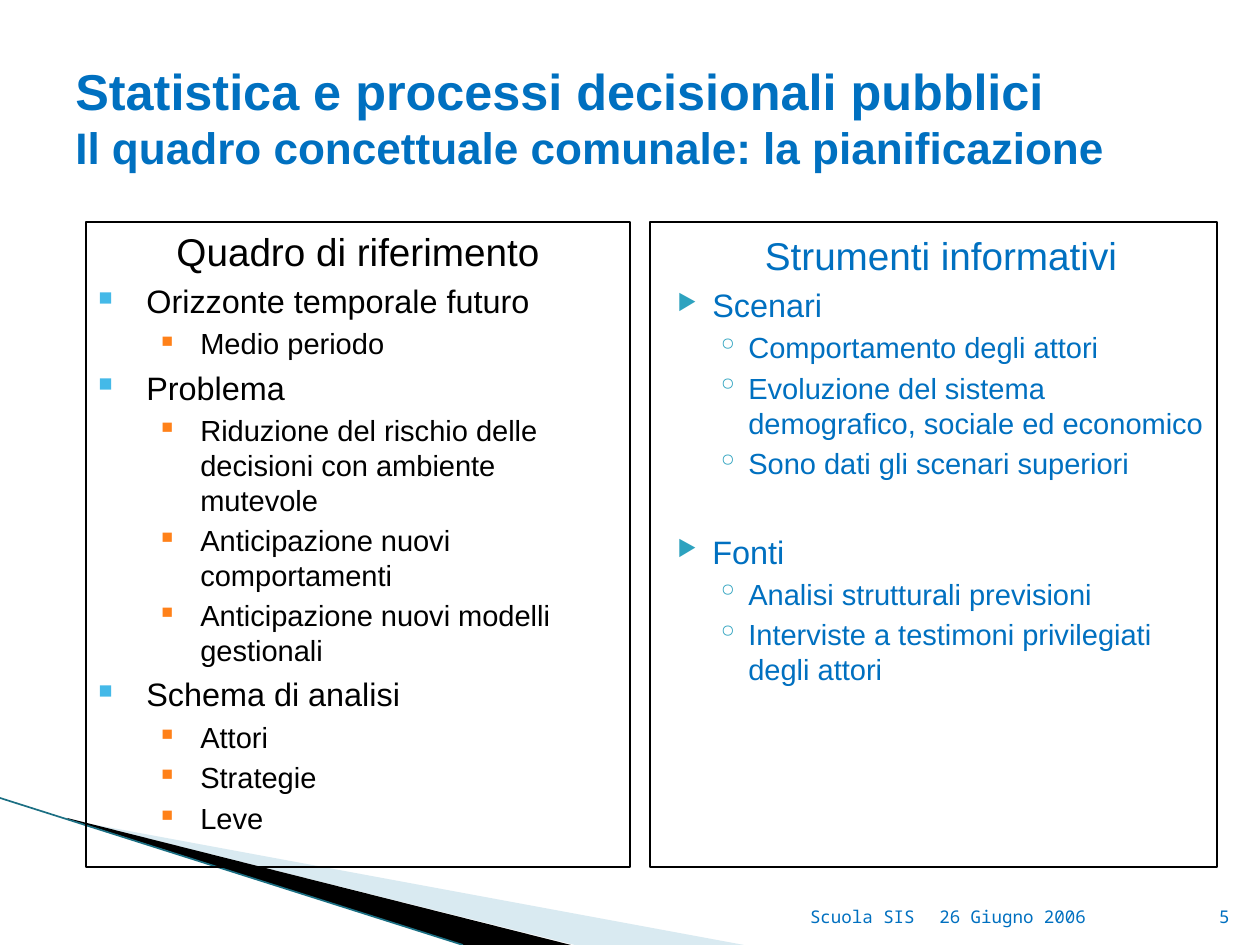
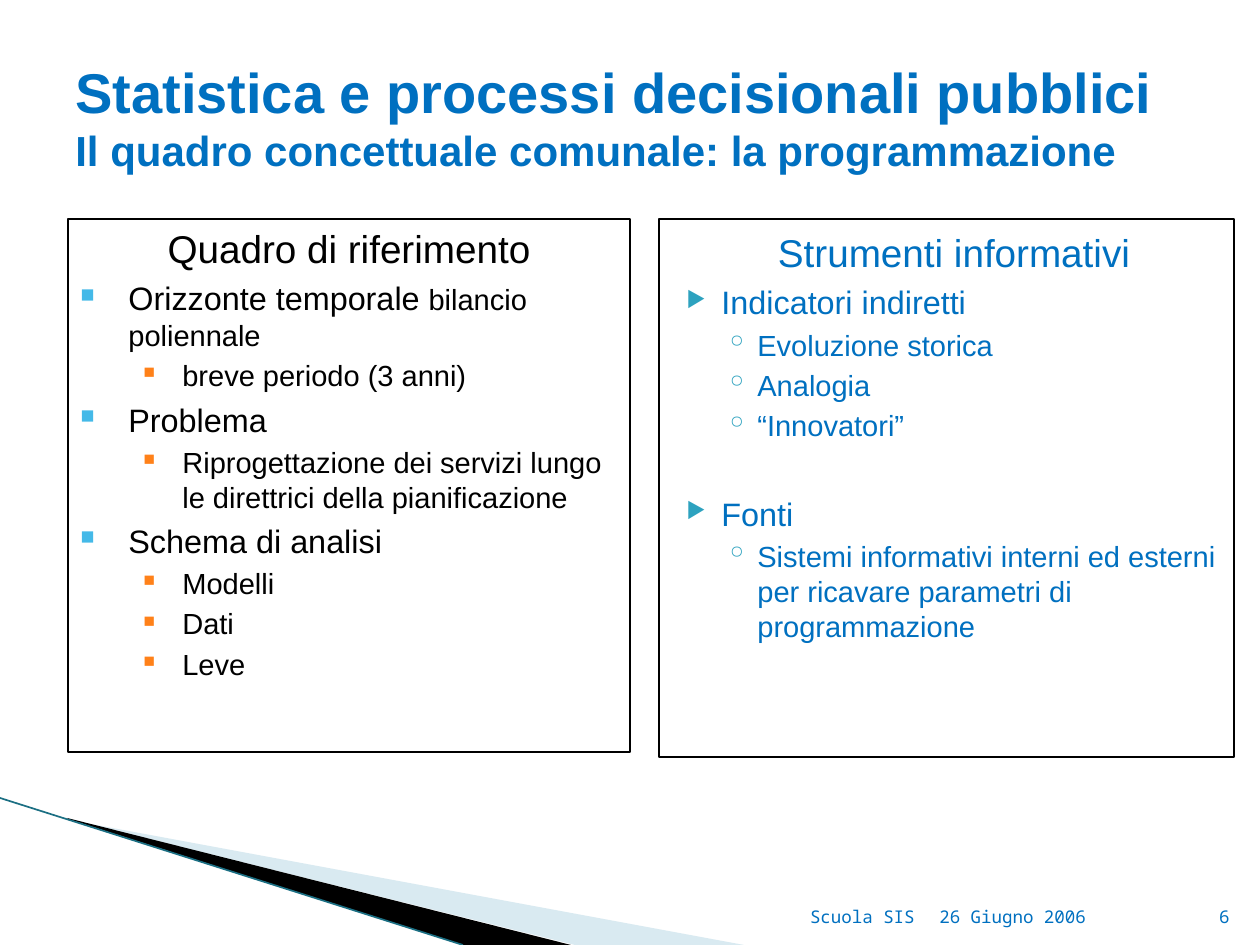
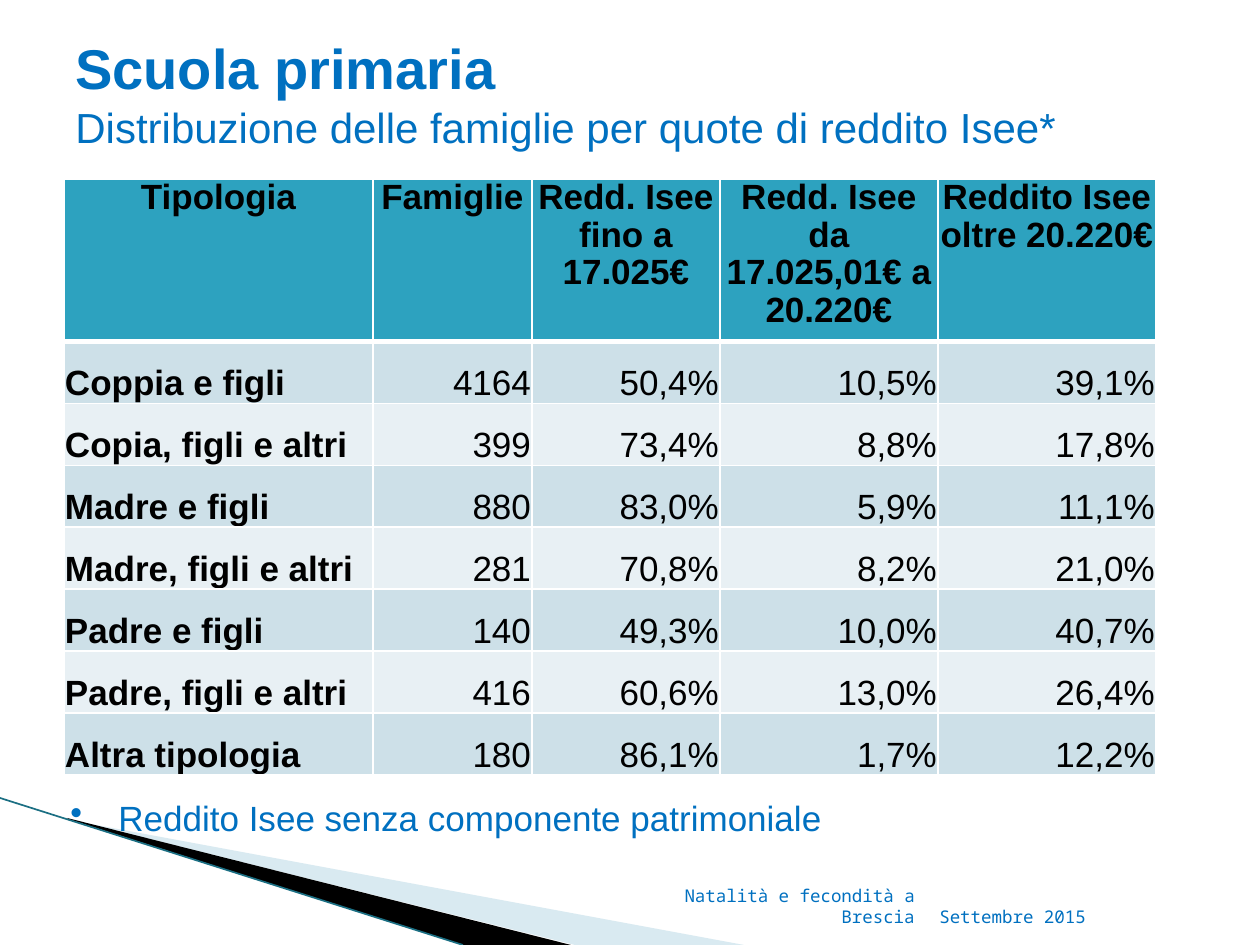
from lxml.etree import SubElement
from pptx import Presentation
from pptx.dml.color import RGBColor
from pptx.enum.shapes import MSO_CONNECTOR, MSO_SHAPE
from pptx.enum.text import MSO_ANCHOR, PP_ALIGN
from pptx.oxml.ns import qn
from pptx.util import Pt

SCALE = 914400 / 126
WIDE, HIGH = 1260, 945
SANS, MONO = "Arial", "Noto Sans Mono"
BLUE, BLACK, WHITE, TEAL = "0070C0", "000000", "FFFFFF", "2DA2BF"
PALE, EDGE = "A0CBDC", "1B6F83"
BANDS = ("CDE0E8", "E8F0F4")

PALE_WEDGE = [(69, 820), (744, 945), (575, 945), (69, 819)]
DARK_WEDGE = [(67, 818), (571, 945), (463, 945), (68, 819)]
EDGE_LINE = (0, 798, 463, 945)

TITLE_BOX = (63, 38, 1134, 157)
FOOT_BOXES = {
    "date": (927, 883, 265, 50),
    "event": (604, 883, 323, 50),
    "page": (1192, 883, 50, 50),
}
NOTE_BOX = (58, 790, 1134, 155)

HEAD_SIZE = 22.1
SIZES = (18.5, 16.6)
GAPS = (4, 3.2)
FONTI_GAP = 29.3

LEFT_STYLE = {
    "ink": BLACK, "top": 6, "head": (48, -48),
    "levels": [(48, -48, "■", "44B9E8", 60), (102, -39, "■", "FF8119", 55)],
}
RIGHT_STYLE = {
    "ink": BLUE, "top": 10, "head": (50, -35),
    "levels": [(50, -35, "▶", TEAL, 68), (86, -32, "◦", TEAL, 100)],
}

PANEL_SLIDES = [
    {
        "title": [("Statistica e processi decisionali pubblici", 28.8, True),
                  ("Il quadro concettuale comunale: la pianificazione", 25.2, True)],
        "foot": {"date": "26 Giugno 2006", "event": "Scuola SIS", "page": "5"},
        "panels": [
            (RIGHT_STYLE, (650, 222, 567, 645), "Strumenti informativi", [
                ("Scenari", ["Comportamento degli attori",
                             "Evoluzione del sistema demografico, sociale ed economico",
                             "Sono dati gli scenari superiori"]),
                ("Fonti", ["Analisi strutturali previsioni",
                           "Interviste a testimoni privilegiati degli attori"]),
            ]),
            (LEFT_STYLE, (86, 222, 544, 645), "Quadro di riferimento", [
                ("Orizzonte temporale futuro", ["Medio periodo"]),
                ("Problema", ["Riduzione del rischio delle decisioni con ambiente mutevole",
                              "Anticipazione nuovi comportamenti",
                              "Anticipazione nuovi modelli gestionali"]),
                ("Schema di analisi", ["Attori", "Strategie", "Leve"]),
            ]),
        ],
    },
    {
        "title": [("Statistica e processi decisionali pubblici", 32, True),
                  ("Il quadro concettuale comunale: la programmazione", 24, True)],
        "foot": {"date": "26 Giugno 2006", "event": "Scuola SIS", "page": "6"},
        "panels": [
            (RIGHT_STYLE, (659, 219, 575, 538), "Strumenti informativi", [
                ("Indicatori indiretti", ["Evoluzione storica", "Analogia", "“Innovatori”"]),
                ("Fonti", ["Sistemi informativi interni ed esterni per ricavare "
                           "parametri di programmazione"]),
            ]),
            (LEFT_STYLE, (68, 219, 562, 533), "Quadro di riferimento", [
                ("Orizzonte temporale |bilancio poliennale", ["breve periodo (3 anni)"]),
                ("Problema", ["Riprogettazione dei servizi lungo le direttrici "
                              "della pianificazione"]),
                ("Schema di analisi", ["Modelli", "Dati", "Leve"]),
            ]),
        ],
    },
]

INCOME_TITLE = [("Scuola primaria", 32, True),
                ("Distribuzione delle famiglie per quote di reddito Isee*", 24, False)]
INCOME_FOOT = {"date": "Settembre 2015", "event": "Natalità e fecondità a Brescia"}
INCOME_NOTE = "Reddito Isee senza componente patrimoniale"
INCOME = [
    ("Tipologia", "Famiglie", "Redd. Isee fino a 17.025€",
     "Redd. Isee da 17.025,01€ a 20.220€", "Reddito Isee oltre 20.220€"),
    ("Coppia e figli", "4164", "50,4%", "10,5%", "39,1%"),
    ("Copia, figli e altri", "399", "73,4%", "8,8%", "17,8%"),
    ("Madre e figli", "880", "83,0%", "5,9%", "11,1%"),
    ("Madre, figli e altri", "281", "70,8%", "8,2%", "21,0%"),
    ("Padre e figli", "140", "49,3%", "10,0%", "40,7%"),
    ("Padre, figli e altri", "416", "60,6%", "13,0%", "26,4%"),
    ("Altra tipologia", "180", "86,1%", "1,7%", "12,2%"),
]
COLS = (309, 159, 188, 218, 218)
TABLE_AT = (64, 179)
HEAD_HIGH, ROW_HIGH = 156, 62


def px(*nums):
    return [round(num * SCALE) for num in nums]


def rgb(code):
    return RGBColor.from_string(code)


def ink(run, size, color, name=SANS, bold=False):
    run.font.size = Pt(size)
    run.font.name = name
    run.font.bold = bold
    run.font.color.rgb = rgb(color)


def indent(para, left, first):
    props = para._p.get_or_add_pPr()
    props.set("marL", str(px(left)[0]))
    props.set("indent", str(px(first)[0]))
    return props


def bullet(para, left, first, mark, color, pct):
    props = indent(para, left, first)
    SubElement(SubElement(props, qn("a:buClr")), qn("a:srgbClr"), val=color)
    SubElement(props, qn("a:buSzPct"), val=str(pct * 1000))
    SubElement(props, qn("a:buChar"), char=mark)


def text_box(slide, box, anchor):
    frame = slide.shapes.add_textbox(*px(*box)).text_frame
    frame.word_wrap = True
    frame.vertical_anchor = anchor
    return frame


def wedge(slide, points, color):
    build = slide.shapes.build_freeform(*points[0], scale=SCALE)
    build.add_line_segments(points[1:])
    shape = build.convert_to_shape()
    shape.shadow.inherit = False
    shape.fill.solid()
    shape.fill.fore_color.rgb = rgb(color)
    shape.line.fill.background()
    return shape


def base(deck, title, foot):
    slide = deck.slides.add_slide(deck.slide_layouts[6])
    pale = wedge(slide, PALE_WEDGE, PALE)
    tint = pale._element.spPr.find(qn("a:solidFill"))[0]
    SubElement(tint, qn("a:alpha"), val="40000")
    wedge(slide, DARK_WEDGE, BLACK)
    edge = slide.shapes.add_connector(MSO_CONNECTOR.STRAIGHT, *px(*EDGE_LINE))
    edge.line.color.rgb = rgb(EDGE)
    edge.line.width = Pt(0.95)
    SubElement(edge._element.spPr, qn("a:effectLst"))

    frame = text_box(slide, TITLE_BOX, MSO_ANCHOR.MIDDLE)
    para = frame.paragraphs[0]
    para.text = "\n".join(line for line, _, _ in title)
    for run, (_, size, bold) in zip(para.runs, title):
        ink(run, size, BLUE, bold=bold)

    for key, text in foot.items():
        label = text_box(slide, FOOT_BOXES[key], MSO_ANCHOR.BOTTOM)
        label.text = text
        para = label.paragraphs[0]
        para.alignment = PP_ALIGN.LEFT if key == "date" else PP_ALIGN.RIGHT
        ink(para.runs[0], 10, BLUE, MONO)
    return slide, frame


def panel(slide, style, box, head, groups):
    shape = slide.shapes.add_shape(MSO_SHAPE.RECTANGLE, *px(*box))
    shape.shadow.inherit = False
    shape.fill.background()
    shape.line.color.rgb = rgb(BLACK)
    shape.line.width = Pt(0.75)
    frame = shape.text_frame
    frame.word_wrap = True
    frame.vertical_anchor = MSO_ANCHOR.TOP
    frame.margin_top = px(style["top"])[0]
    frame.text = head
    para = frame.paragraphs[0]
    para.alignment = PP_ALIGN.CENTER
    indent(para, *style["head"])
    ink(para.runs[0], HEAD_SIZE, style["ink"])

    for topic, points in groups:
        for level, text in [(0, topic)] + [(1, point) for point in points]:
            para = frame.add_paragraph()
            para.level = level
            para.alignment = PP_ALIGN.LEFT
            para.space_before = Pt(FONTI_GAP if text == "Fonti" else GAPS[level])
            bullet(para, *style["levels"][level])
            for part, size in zip(text.split("|"), SIZES[level:]):
                run = para.add_run()
                run.text = part
                ink(run, size, style["ink"])


def border(cell, side, width):
    line = SubElement(cell._tc.get_or_add_tcPr(), qn("a:ln" + side), w=str(Pt(width)))
    SubElement(SubElement(line, qn("a:solidFill")), qn("a:srgbClr"), val=WHITE)


def income_table(slide):
    size = (sum(COLS), HEAD_HIGH + ROW_HIGH * (len(INCOME) - 1))
    table = slide.shapes.add_table(len(INCOME), len(COLS), *px(*TABLE_AT, *size)).table
    for col, wide in zip(table.columns, COLS):
        col.width = px(wide)[0]
    for r, row in enumerate(INCOME):
        top = r == 0
        table.rows[r].height = px(HEAD_HIGH if top else ROW_HIGH)[0]
        for c, text in enumerate(row):
            cell = table.cell(r, c)
            cell.margin_left = cell.margin_right = cell.margin_top = px(1)[0]
            cell.margin_bottom = 0
            cell.vertical_anchor = MSO_ANCHOR.TOP if top else MSO_ANCHOR.BOTTOM
            for side, width in (("L", 1), ("R", 1), ("T", 3 if r == 1 else 1),
                                ("B", 3 if top else 1)):
                border(cell, side, width)
            cell.fill.solid()
            cell.fill.fore_color.rgb = rgb(TEAL if top else BANDS[(r - 1) % 2])
            cell.text_frame.text = text
            para = cell.text_frame.paragraphs[0]
            if top:
                para.alignment = PP_ALIGN.CENTER
                para.line_spacing = 0.96
            else:
                para.alignment = PP_ALIGN.RIGHT if c else PP_ALIGN.LEFT
            ink(para.runs[0], 20, BLACK, bold=top or c == 0)


def main():
    deck = Presentation()
    deck.slide_width, deck.slide_height = px(WIDE, HIGH)
    for page in PANEL_SLIDES:
        slide, _ = base(deck, page["title"], page["foot"])
        for part in page["panels"]:
            panel(slide, *part)

    slide, title = base(deck, INCOME_TITLE, INCOME_FOOT)
    title.margin_bottom = px(54)[0]
    income_table(slide)
    note = text_box(slide, NOTE_BOX, MSO_ANCHOR.TOP)
    note.text = INCOME_NOTE
    para = note.paragraphs[0]
    bullet(para, 48, -48, "•", BLUE, 100)
    ink(para.runs[0], 20, BLUE)
    deck.save("out.pptx")


if __name__ == "__main__":
    main()
